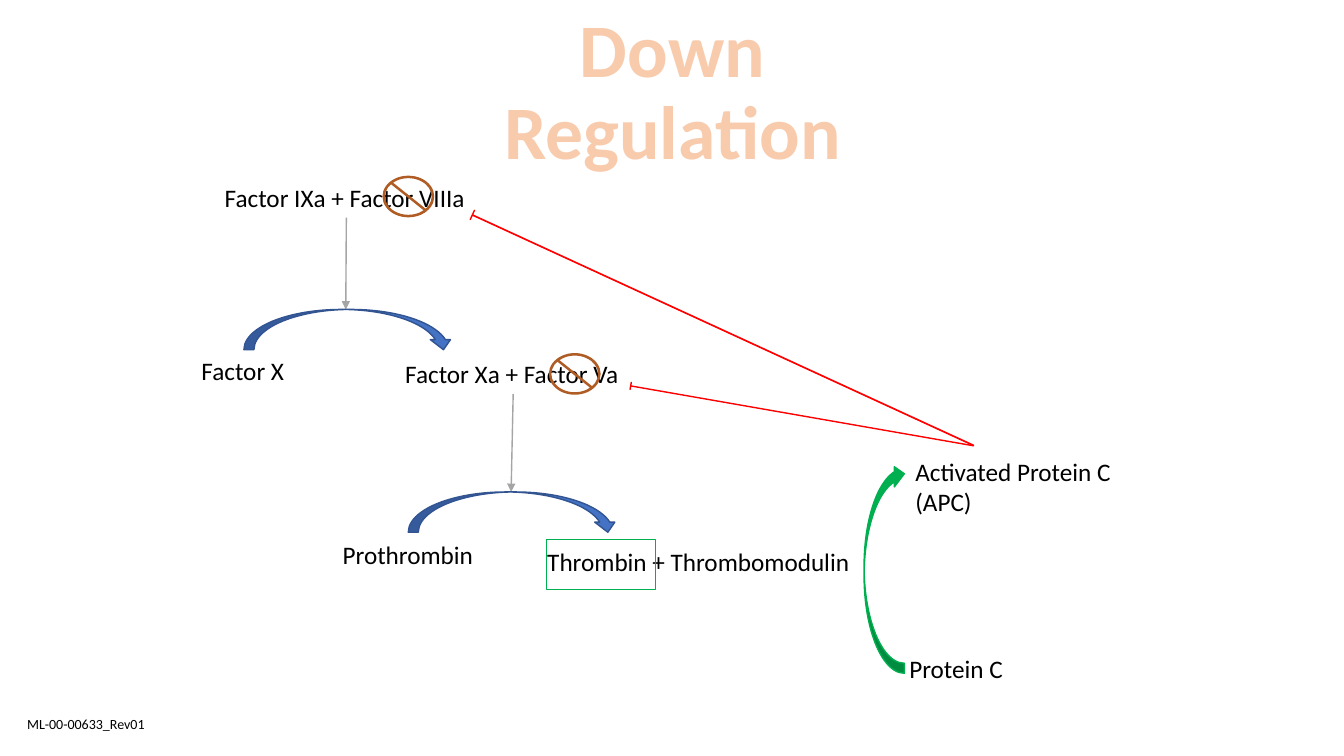
from lxml.etree import SubElement
from pptx import Presentation
from pptx.dml.color import RGBColor
from pptx.enum.shapes import MSO_CONNECTOR as Connector, MSO_SHAPE as Shape
from pptx.enum.text import MSO_ANCHOR as Anchor, MSO_AUTO_SIZE as AutoSize, PP_ALIGN as Align
from pptx.oxml.ns import qn
from pptx.util import Inches, Pt


def color(hex_code):
    return RGBColor.from_string(hex_code)


class PathwaySlide:
    """Draws pathway elements, with lengths in percent of the slide's size."""

    font, black, grey = "Calibri", "000000", "A5A5A5"
    blue, navy, green, red = "4472C4", "325491", "00B050", "FF0000"
    orange, brown, peach = "ED7D31", "AF5C24", "F8CBAD"

    def __init__(self, deck):
        self.width, self.height = deck.slide_width, deck.slide_height
        self.shapes = deck.slides.add_slide(deck.slide_layouts[6]).shapes

    def place(self, left, top, width, height):
        return (int(self.width * left / 100), int(self.height * top / 100),
                int(self.width * width / 100), int(self.height * height / 100))

    def label(self, text, left, top, width, height=5.33, size=18):
        box = self.shapes.add_textbox(*self.place(left, top, width, height))
        frame = box.text_frame
        frame.word_wrap = False
        frame.auto_size = AutoSize.SHAPE_TO_FIT_TEXT
        frame.text = text
        for para in frame.paragraphs:
            for span in para.runs:
                span.font.name = self.font
                span.font.size = Pt(size)
                span.font.color.rgb = color(self.black)
        return box

    def title(self, text, *area):
        frame = self.label(text, *area, size=54).text_frame
        frame.word_wrap = True
        frame.auto_size = AutoSize.NONE
        frame.vertical_anchor = Anchor.MIDDLE
        para = frame.paragraphs[0]
        para.alignment = Align.CENTER
        para.line_spacing = 0.9
        para.runs[0].font.bold = True
        para.runs[0].font.color.rgb = color(self.peach)

    def shape(self, kind, area, fill, line, turn=0, adjust=()):
        shape = self.shapes.add_shape(kind, *self.place(*area))
        shape.shadow.inherit = False
        shape.rotation = turn
        for index, value in enumerate(adjust):
            shape.adjustments[index] = value
        if fill:
            shape.fill.solid()
            shape.fill.fore_color.rgb = color(fill)
        else:
            shape.fill.background()
        shape.line.color.rgb = color(line)
        shape.line.width = Pt(1)

    def conversion(self, left, top, fill, line, turn=0):
        self.shape(Shape.CURVED_DOWN_ARROW, (left, top, 15.6, 5.33), fill, line, turn)

    def inhibition(self, area, turn, shaft):
        self.shape(Shape.UP_ARROW, area, self.red, self.red, turn, (shaft, 0))

    def blocked(self, left, top):
        self.shape(Shape.NO_SYMBOL, (left, top, 3.75, 5.33), self.orange, self.brown,
                   adjust=(0.028,))

    def arrow_from(self, box, left, top):
        end_x, end_y, _, _ = self.place(left, top, 0, 0)
        arrow = self.shapes.add_connector(Connector.STRAIGHT, box.left, box.top, end_x, end_y)
        arrow.begin_connect(box, 2)
        arrow.line.color.rgb = color(self.grey)
        arrow.line.width = Pt(1)
        SubElement(arrow.line._get_or_add_ln(), qn("a:tailEnd"), type="triangle")
        SubElement(arrow._element.spPr, qn("a:effectLst"))


def main():
    deck = Presentation()
    deck.slide_width, deck.slide_height = Inches(13.33), Inches(7.5)
    page = PathwaySlide(deck)

    tenase = page.label("Factor IXa + Factor VIIIa", 15.98, 23.47, 19.58)
    page.label("Factor X", 14.25, 46.4, 7.73)
    prothrombinase = page.label("Factor Xa + Factor Va", 29.41, 46.8, 17.55)
    page.label("Prothrombin", 24.76, 70.67, 11.33)
    page.label("Thrombin + Thrombomodulin", 39.98, 71.6, 24.23)
    page.label("Protein C", 66.92, 85.73, 8.55)
    page.label("Activated Protein C\n(APC)", 67.37, 59.73, 16.2, 9.47)

    page.arrow_from(tenase, 25.73, 40.93)
    page.arrow_from(prothrombinase, 38.03, 65.07)
    page.conversion(18.15, 40.93, page.blue, page.navy)
    page.conversion(30.38, 65.07, page.blue, page.navy)
    page.conversion(57.99, 72.53, page.green, page.green, turn=270)

    page.inhibition((53.41, 7.2, 0.75, 72.93), 294.7, 0.03)
    page.inhibition((59.41, 32, 0.53, 46), 279.9, 0)
    page.blocked(28.51, 23.33)
    page.blocked(40.89, 46.8)
    page.shape(Shape.RECTANGLE, (40.66, 71.33, 8.1, 6.67), None, page.green)

    page.title("Down Regulation", 30.23, 6.27, 39.61, 12.27)
    page.label("ML-00-00633_Rev01", 1.28, 94, 10.43, 3.6, size=10)
    deck.save("out.pptx")


if __name__ == "__main__":
    main()
